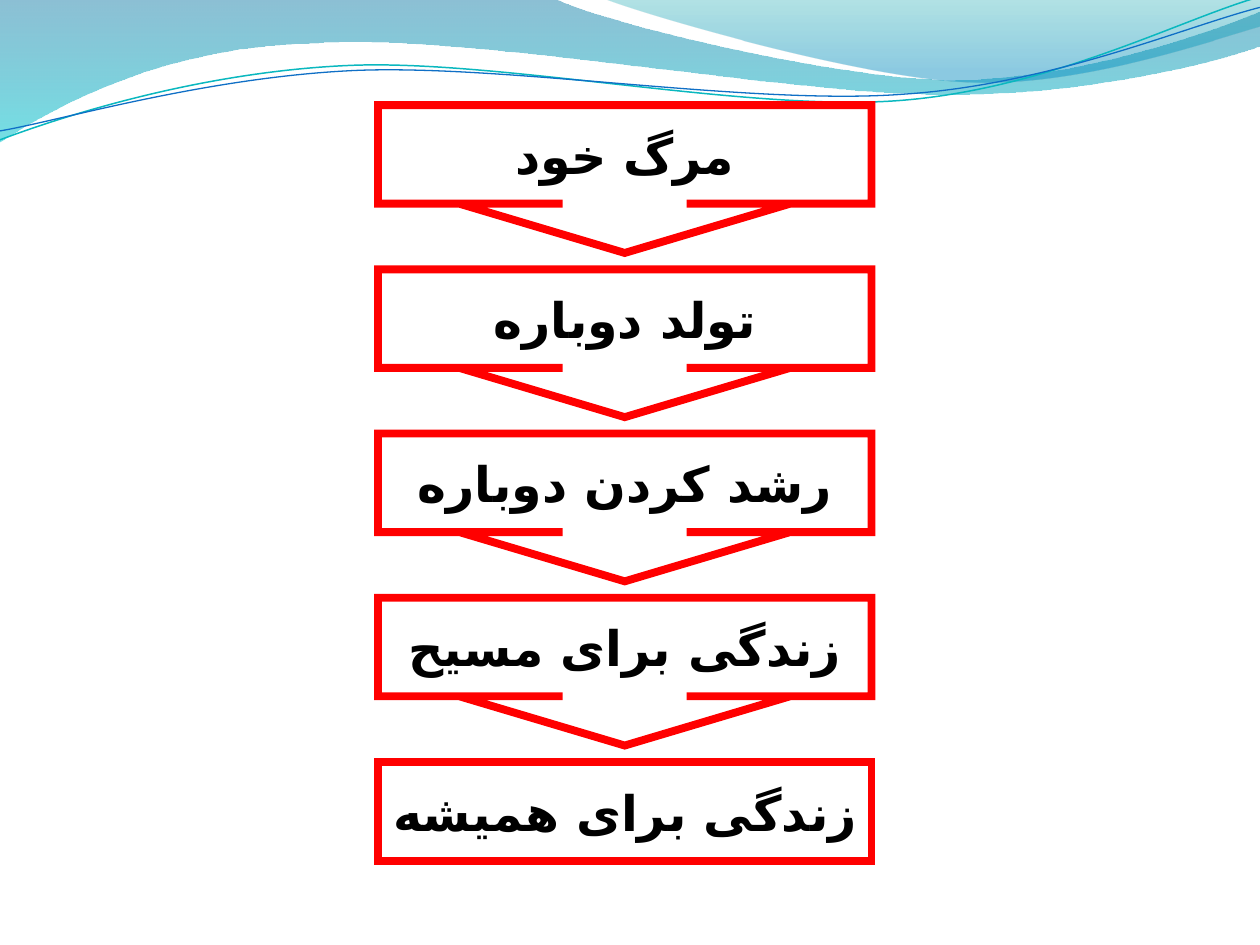
from lxml.etree import Element, SubElement
from pptx import Presentation
from pptx.dml.color import RGBColor
from pptx.enum.shapes import MSO_SHAPE
from pptx.enum.text import MSO_ANCHOR, PP_ALIGN
from pptx.oxml.ns import qn
from pptx.util import Cm, Pt

WHITE = RGBColor(0xFF, 0xFF, 0xFF)
BLACK = RGBColor(0, 0, 0)
RED = RGBColor(0xFF, 0, 0)
TEAL = RGBColor(0x0A, 0xB8, 0xBF)
BLUE = RGBColor(0x0F, 0x6F, 0xC6)
DEEP = RGBColor(0x00, 0x74, 0xA1)
CYAN = RGBColor(0x00, 0xC6, 0xCF)
SEA = RGBColor(0x00, 0xA1, 0xA9)
SKY = RGBColor(0x00, 0x8B, 0xBF)

# Content: the steps, top to bottom
STEPS = ["مرگ خود", "تولد دوباره", "رشد کردن دوباره",
         "زندگی برای مسیح", "زندگی برای همیشه"]
FONT = {"name": "Montserrat", "size": Pt(28), "bold": True}
SCRIPT = "DejaVu Sans"  # face for the Persian letters

# Box grid in cm
LEFT, TOP, WIDTH, PITCH = 7.62, 2.12, 9.95, 3.31
CALL_H, LAST_H = 2.98, 2
ARROW = (0.839, 1.119, 0.333, 0.667)

# Waves in cm: a start, then parts of one point (line) or three (curve)
# Bands add gradient stops: position, colour, opacity in percent
BANDS = [
    ([(0, 0), [(11.18, -0.03)],
      [(12.09, 0.43), (16.87, 1.6), (19.25, 1.6)],
      [(21.67, 1.6), (24.33, 0.66), (25.4, 0.23)],
      [(25.43, 0.91)],
      [(24.97, 1.12), (22.1, 1.93), (18.95, 1.9)],
      [(15.8, 1.9), (9.7, 0.71), (6.53, 0.86)],
      [(3.28, 0.91), (1.17, 2.11), (-0.03, 2.87)]],
     [(0, DEEP, 45), (1, CYAN, 55)]),
    ([(12.17, -0.03),
      [(12.93, 0.28), (17.32, 1.57), (19.53, 1.65)],
      [(21.74, 1.75), (24.41, 0.81), (25.4, 0.53)],
      [(25.4, 0)]],
     [(0, SEA, 30), (0.8, SKY, 45)]),
]
LINES = [
    ([(0, 2.82),
      [(1.22, 2.36), (4.01, 1.45), (7.04, 1.32)],
      [(10.03, 1.19), (15.06, 2.26), (18.11, 2.03)],
      [(21.16, 1.8), (23.83, 0.38), (25.35, -0.05)]], TEAL, 0.85),
    ([(0, 2.64),
      [(1.19, 2.44), (4.17, 1.55), (7.19, 1.42)],
      [(10.24, 1.3), (15.16, 2.13), (18.21, 1.9)],
      [(21.23, 1.7), (23.9, 0.53), (25.4, 0.15)]], BLUE, 0.75),
]


def add_wave(slide, start, parts, close):
    """Outline all points, then join each group of three into a curve."""
    pen = slide.shapes.build_freeform(Cm(start[0]), Cm(start[1]))
    dots = [(Cm(x), Cm(y)) for part in parts for x, y in part]
    pen.add_line_segments(dots, close=close)
    wave = pen.convert_to_shape()
    wave.shadow.inherit = False
    legs = iter(list(wave.element.spPr.iter(qn("a:lnTo"))))
    for part in parts:
        group = [next(legs) for _ in part]
        if len(group) == 3:
            curve = Element(qn("a:cubicBezTo"))
            group[0].addprevious(curve)
            for leg in group:
                curve.append(leg[0])
                leg.getparent().remove(leg)
    return wave


def add_band(slide, outline, stops):
    band = add_wave(slide, outline[0], outline[1:], True)
    band.line.fill.background()
    band.fill.gradient()
    band.fill.gradient_angle = 270
    for stop, (place, color, _) in zip(band.fill.gradient_stops, stops):
        stop.position = place
        stop.color.rgb = color
    tints = band.element.spPr.iter(qn("a:srgbClr"))
    for tint, (_, _, solid) in zip(tints, stops):
        SubElement(tint, qn("a:alpha"), val=str(solid * 1000))


def add_line(slide, outline, color, width):
    line = add_wave(slide, outline[0], outline[1:], False)
    line.fill.background()
    line.line.color.rgb = color
    line.line.width = Pt(width)


def add_step(slide, row, text, last):
    kind = MSO_SHAPE.RECTANGLE if last else MSO_SHAPE.DOWN_ARROW_CALLOUT
    box = slide.shapes.add_shape(kind, Cm(LEFT), Cm(TOP + row * PITCH),
                                 Cm(WIDTH), Cm(LAST_H if last else CALL_H))
    if not last:
        for i, ratio in enumerate(ARROW):
            box.adjustments[i] = ratio
    box.shadow.inherit = False
    box.fill.solid()
    box.fill.fore_color.rgb = WHITE
    box.line.color.rgb = RED
    box.line.width = Pt(4.5)
    edge = box.element.spPr.find(qn("a:ln"))
    SubElement(edge, qn("a:miter"), lim="800000")

    # Persian text, read right to left
    frame = box.text_frame
    frame.word_wrap = False
    frame.vertical_anchor = MSO_ANCHOR.MIDDLE
    para = frame.paragraphs[0]
    para.alignment = PP_ALIGN.CENTER
    para._p.get_or_add_pPr().set("rtl", "1")
    run = para.add_run()
    run.text = text
    for key, value in FONT.items():
        setattr(run.font, key, value)
    run.font.color.rgb = BLACK
    SubElement(run._r.get_or_add_rPr(), qn("a:cs"), typeface=SCRIPT)


def main():
    deck = Presentation()
    deck.slide_width, deck.slide_height = Cm(25.4), Cm(19.05)
    slide = deck.slides.add_slide(deck.slide_layouts[6])
    for band in BANDS:
        add_band(slide, *band)
    for line in LINES:
        add_line(slide, *line)
    for row, text in enumerate(STEPS):
        add_step(slide, row, text, row == len(STEPS) - 1)
    deck.save("out.pptx")


if __name__ == "__main__":
    main()
